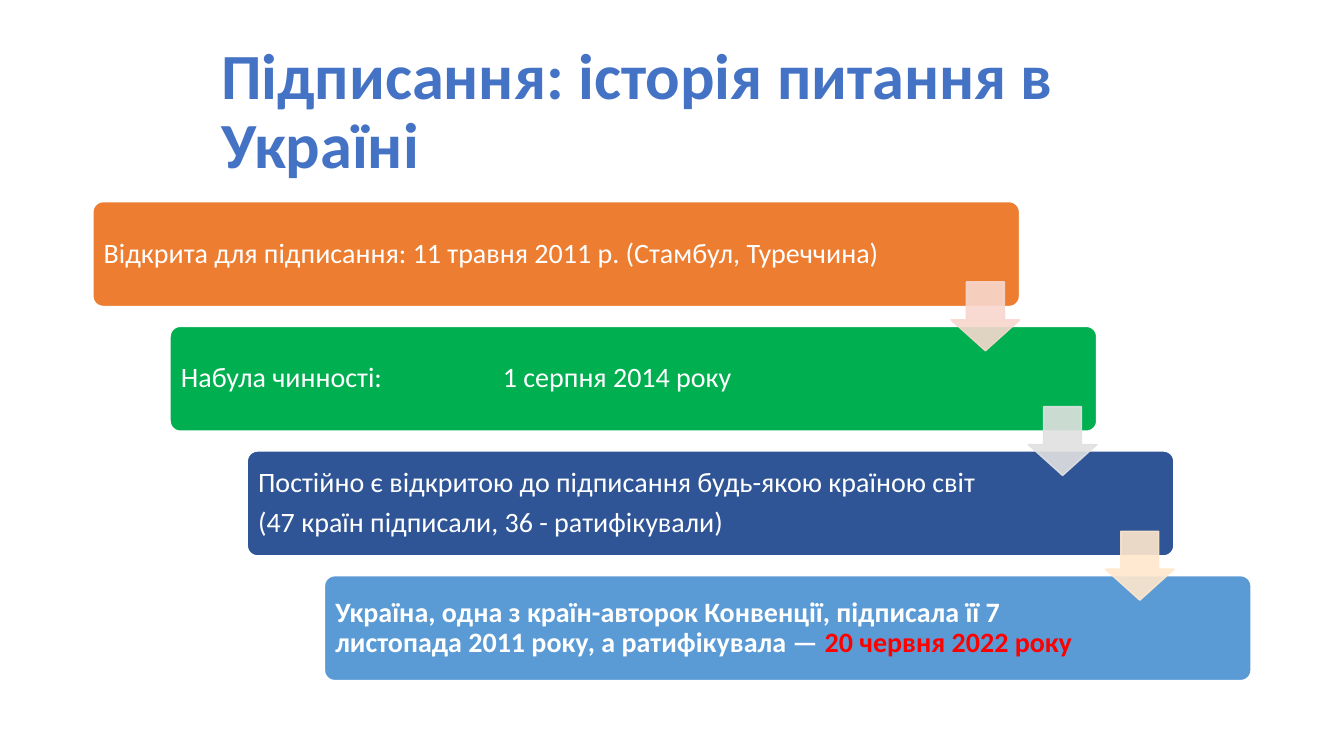
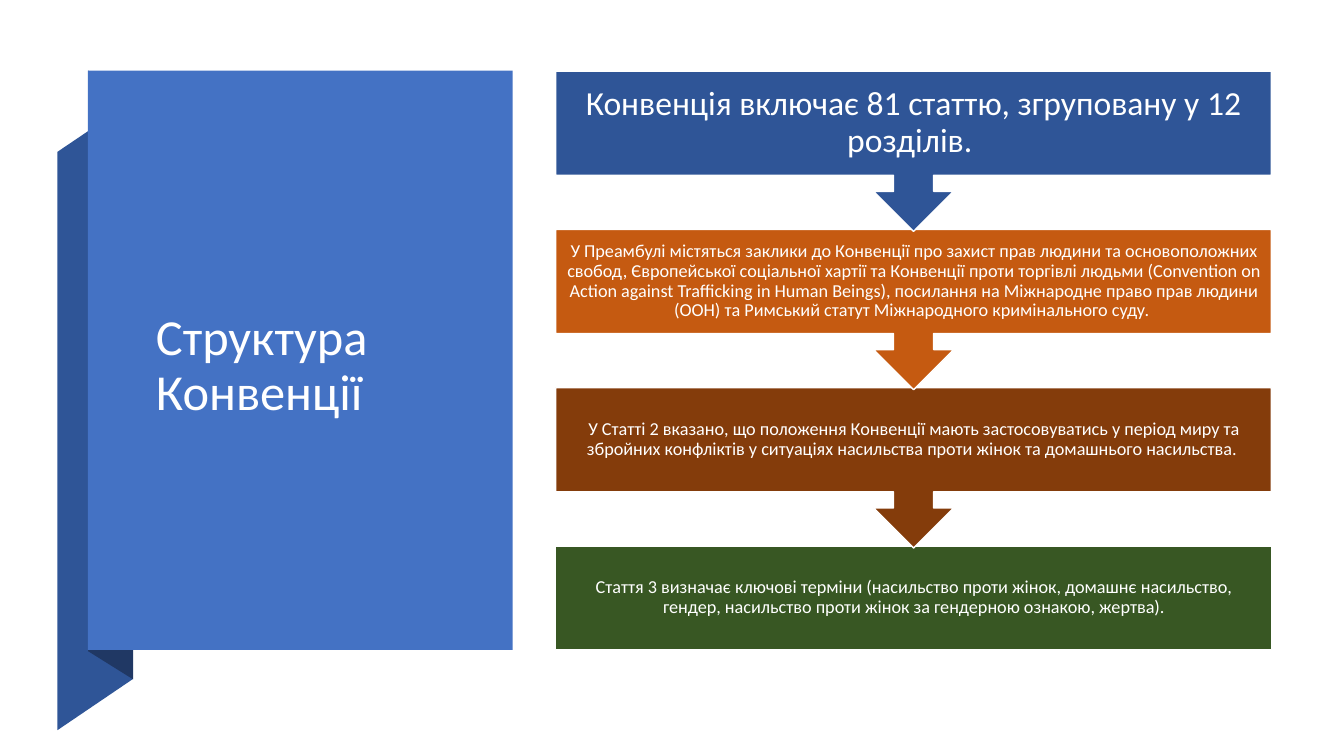
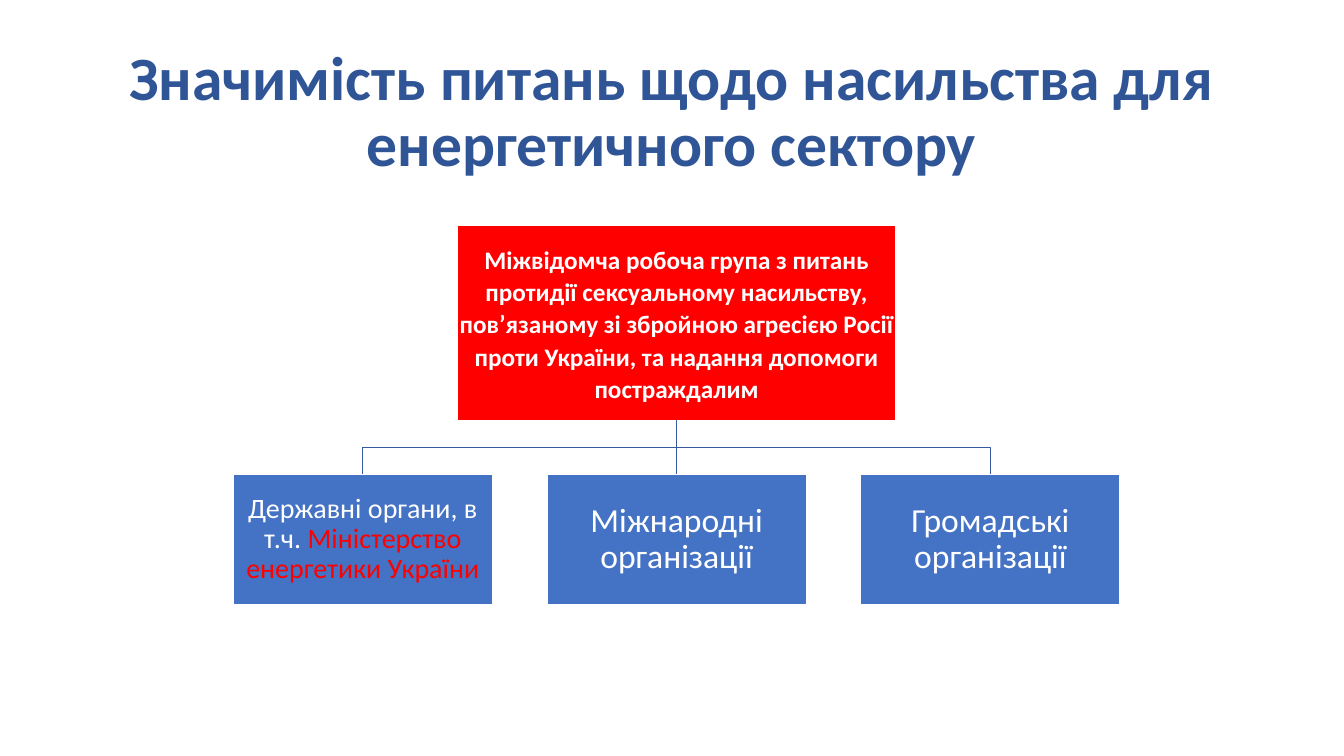
from dataclasses import dataclass
from typing import NamedTuple

from lxml import etree
from pptx import Presentation
from pptx.dml.color import RGBColor
from pptx.enum.shapes import MSO_CONNECTOR, MSO_SHAPE
from pptx.enum.text import MSO_ANCHOR, MSO_AUTO_SIZE, PP_ALIGN
from pptx.oxml.ns import qn
from pptx.util import Pt

RECTANGLE = MSO_SHAPE.RECTANGLE
ROUNDED = MSO_SHAPE.ROUNDED_RECTANGLE
DOWN_ARROW = MSO_SHAPE.DOWN_ARROW
CALLOUT = MSO_SHAPE.DOWN_ARROW_CALLOUT
STRAIGHT = MSO_CONNECTOR.STRAIGHT
LEFT, CENTER = PP_ALIGN.LEFT, PP_ALIGN.CENTER
MIDDLE = MSO_ANCHOR.MIDDLE
TOP_SIDE, BOTTOM_SIDE = 0, 2


@dataclass(frozen=True)
class Theme:
    font: str = "Calibri"
    white: str = "FFFFFF"
    blue: str = "4472C4"
    dark_blue: str = "2F5597"
    navy: str = "203864"
    sky: str = "5B9BD5"
    orange: str = "ED7D31"
    rust: str = "C55A11"
    brown: str = "843C0B"
    green: str = "00B050"
    forest: str = "385723"
    red: str = "FF0000"
    link: str = "365B9D"
    pink_arrow: str = "F8D7CE"
    grey_arrow: str = "E1E1E1"
    cream_arrow: str = "FFE8CC"
    history_title: int = 46
    sector_title: int = 44
    panel_title: int = 36
    large: int = 24
    body: int = 20
    group: int = 18
    small: int = 13


THEME = Theme()


class Box(NamedTuple):
    left: float
    top: float
    width: float
    height: float

    def points(self):
        return [Pt(value) for value in self]


def rgb(color):
    return RGBColor.from_string(color)


def apply(target, formats):
    for name, value in formats.items():
        setattr(target, name, value)


def draw_line(shape, color, width=1.0):
    shape.line.color.rgb = rgb(color)
    shape.line.width = Pt(width)


def paint(shape, fill, line=None, line_width=1.0):
    shape.shadow.inherit = False
    shape.fill.solid()
    shape.fill.fore_color.rgb = rgb(fill)
    if line is None:
        shape.line.fill.background()
    else:
        draw_line(shape, line, line_width)


def set_opacity(shape, percent):
    for color in shape.element.spPr.iter(qn("a:srgbClr")):
        etree.SubElement(color, qn("a:alpha"), val=str(percent * 1000))


def add_tab_stop(para, position):
    tabs = etree.SubElement(para._p.get_or_add_pPr(), qn("a:tabLst"))
    etree.SubElement(tabs, qn("a:tab"), pos=str(Pt(position)), algn="l")


def write(shape, paragraphs, size, color=THEME.white, bold=False, align=CENTER,
          spacing=0.9, after=None, insets=(7.2, 3.6, 7.2, 3.6)):
    """Fill a shape with paragraphs, each a list of (text, colour or None) spans."""
    frame = shape.text_frame
    left, top, right, bottom = map(Pt, insets)
    apply(frame, dict(word_wrap=True, auto_size=MSO_AUTO_SIZE.NONE,
                      vertical_anchor=MIDDLE, margin_left=left, margin_top=top,
                      margin_right=right, margin_bottom=bottom))
    gaps = after or [0.35 * size] * len(paragraphs)
    for index, (spans, gap) in enumerate(zip(paragraphs, gaps)):
        para = frame.add_paragraph() if index else frame.paragraphs[0]
        apply(para, dict(alignment=align, line_spacing=spacing, space_after=Pt(gap)))
        for text, span_color in spans:
            span = para.add_run()
            span.text = text
            apply(span.font, dict(name=THEME.font, size=Pt(size), bold=bold))
            span.font.color.rgb = rgb(span_color or color)


def add_block(page, kind, box, fill, line=None, line_width=1.0):
    block = page.shapes.add_shape(kind, *box.points())
    paint(block, fill, line, line_width)
    return block


def add_outline(page, corners, close=True):
    start, *rest = [(Pt(x), Pt(y)) for x, y in corners]
    builder = page.shapes.build_freeform(*start)
    builder.add_line_segments(rest, close=close)
    return builder.convert_to_shape()


def add_bent_line(page, corners):
    line = add_outline(page, corners, close=False)
    line.shadow.inherit = False
    line.fill.background()
    draw_line(line, THEME.link)


def join_blocks(page, upper, lower):
    """Straight line from the bottom of one block to the top of another."""
    line = page.shapes.add_connector(STRAIGHT, 0, 0, 0, 0)
    line.begin_connect(upper, BOTTOM_SIDE)
    line.end_connect(lower, TOP_SIDE)
    draw_line(line, THEME.link)
    etree.SubElement(line.element.spPr, qn("a:effectLst"))


def place_title(page, box, text, **style):
    title = page.shapes.title
    apply(title, dict(zip(("left", "top", "width", "height"), box.points())))
    write(title, [[(text, None)]], after=[0], **style)
    return title


def add_staircase(page, box, steps, arrow_colors):
    """Stepped blocks from top left to bottom right, arrows between neighbours."""
    width, height, arrow, arrow_drop = 662.4, 75.4, 49.2, 57.6
    shift = (box.width - width) / (len(steps) - 1)
    drop = (box.height - height) / (len(steps) - 1)
    spots = [Box(box.left + i * shift, box.top + i * drop, width, height)
             for i in range(len(steps))]
    for spot, (fill, bold, paragraphs) in zip(spots, steps):
        block = add_block(page, ROUNDED, spot, fill, THEME.white, 1.5)
        block.adjustments[0] = 0.1
        write(block, paragraphs, THEME.body, bold=bold, align=LEFT,
              insets=(5.8, 5.8, 88, 5.8))
        for para in block.text_frame.paragraphs:
            if "\t" in para.text:
                add_tab_stop(para, 230)
    for spot, color in zip(spots, arrow_colors):
        place = Box(spot.left + width - arrow, spot.top + arrow_drop, arrow, arrow)
        pointer = add_block(page, DOWN_ARROW, place, color, color)
        pointer.adjustments[0], pointer.adjustments[1] = 0.55, 0.45
        set_opacity(pointer, 90)


def add_ribbon_panel(page, box):
    """Panel with a ribbon folded behind its left edge."""
    left, top = box.left, box.top
    bottom = top + box.height
    tail, fold = left - 21.7, left + 32.3
    ribbon = [(tail, bottom + 57.4), (fold, bottom + 20.8),
              (fold, top + 21.5), (tail, top + 58)]
    shade = [(left + 0.3, bottom + 1), (fold, bottom + 21),
             (fold, top + 21), (left + 0.3, top)]
    for corners, fill in ((ribbon, THEME.dark_blue), (shade, THEME.navy)):
        paint(add_outline(page, corners), fill)
    add_block(page, RECTANGLE, box, THEME.blue)


def add_callout_chain(page, box, links):
    """Blocks pointing down one to the next; upper ones lie in front."""
    block_height, callout_height = 74, 114.5
    step = (box.height - block_height) / (len(links) - 1)
    for index, (fill, size, inset, text) in reversed(list(enumerate(links))):
        last = index == len(links) - 1
        place = Box(box.left, box.top + index * step, box.width,
                    block_height if last else callout_height)
        block = add_block(page, RECTANGLE if last else CALLOUT, place, fill, THEME.white)
        write(block, [[(text, None)]], size, insets=[inset] * 4)


def add_hierarchy(page, box, root_paragraphs, members):
    """A root block centred over a row of members, joined by lines."""
    root_width, root_height, width, height = 312.8, 139.7, 185.3, 93.1
    center = box.left + box.width / 2
    root_bottom = box.top + root_height
    row_top = box.top + box.height - height
    bus = (root_bottom + row_top) / 2
    step = (box.width - width) / (len(members) - 1)
    root = add_block(page, RECTANGLE,
                     Box(center - root_width / 2, box.top, root_width, root_height),
                     THEME.red, THEME.white)
    write(root, root_paragraphs, THEME.group, bold=True, spacing=1.07,
          after=[0, 8], insets=[0.8] * 4)
    for index, (size, spans) in enumerate(members):
        left = box.left + index * step
        middle = left + width / 2
        block = add_block(page, RECTANGLE, Box(left, row_top, width, height),
                          THEME.blue, THEME.white)
        write(block, [spans], size, insets=[1.2] * 4)
        if abs(middle - center) < 1:
            join_blocks(page, root, block)
        else:
            add_bent_line(page, [(center, root_bottom), (center, bus),
                                 (middle, bus), (middle, row_top)])


def build_history(page):
    place_title(page, Box(150.8, 28.6, 743, 104.4), "Підписання: історія питання в Україні",
                size=THEME.history_title, color=THEME.blue, bold=True, align=LEFT)
    steps = [
        (THEME.orange, False,
         [[("Відкрита для підписання: 11 травня 2011 р. (Стамбул, Туреччина)", None)]]),
        (THEME.green, False, [[("Набула чинності:\t1 серпня 2014 року", None)]]),
        (THEME.dark_blue, False,
         [[("Постійно є відкритою до підписання будь-якою країною світ", None)],
          [("(47 країн підписали, 36 - ратифікували)", None)]]),
        (THEME.sky, True,
         [[("Україна, одна з країн-авторок Конвенції, підписала її 7 листопада 2011 року, "
            "а ратифікувала — ", None), ("20 червня 2022 року", THEME.red)]]),
    ]
    add_staircase(page, Box(66.1, 143.8, 827.8, 342.6), steps,
                  [THEME.pink_arrow, THEME.grey_arrow, THEME.cream_arrow])


def build_structure(page):
    add_ribbon_panel(page, Box(62.7, 50.5, 303.5, 413.7))
    title = place_title(page, Box(104.2, 120, 216.7, 283.7), "Структура Конвенції",
                        size=THEME.panel_title, align=LEFT)
    title.element.getparent().append(title.element)
    links = [
        (THEME.dark_blue, THEME.large, 13.7,
         "Конвенція включає 81 статтю, згруповану у 12 розділів. "),
        (THEME.rust, THEME.small, 7.2,
         "У Преамбулі містяться заклики до Конвенції про захист прав людини та "
         "основоположних свобод, Європейської соціальної хартії та Конвенції проти "
         "торгівлі людьми (Convention on Action against Trafficking in Human Beings), "
         "посилання на Міжнародне право прав людини (ООН) та Римський статут "
         "Міжнародного кримінального суду. "),
        (THEME.brown, THEME.small, 7.2,
         "У Статті 2 вказано, що положення Конвенції мають застосовуватись у період "
         "миру та збройних конфліктів у ситуаціях насильства проти жінок та "
         "домашнього насильства. "),
        (THEME.forest, THEME.small, 7.2,
         "Стаття 3 визначає ключові терміни (насильство проти жінок, домашнє "
         "насильство, гендер, насильство проти жінок за гендерною ознакою, жертва)."),
    ]
    add_callout_chain(page, Box(397, 50.8, 511.2, 413.2), links)


def build_sector(page):
    place_title(page, Box(66, 28.8, 828, 104.4),
                "Значимість питань щодо насильства для енергетичного сектору",
                size=THEME.sector_title, color=THEME.dark_blue, bold=True)
    root = [
        [("Міжвідомча робоча група з питань", None)],
        [("протидії сексуальному насильству, пов’язаному зі збройною агресією Росії "
          "проти України, та надання допомоги постраждалим", None)],
    ]
    members = [
        (THEME.body, [("Державні органи, в т.ч. ", None),
                      ("Міністерство енергетики України", THEME.red)]),
        (THEME.large, [("Міжнародні організації", None)]),
        (THEME.large, [("Громадські організації", None)]),
    ]
    add_hierarchy(page, Box(166.5, 160.6, 633.6, 271.4), root, members)


def main():
    deck = Presentation()
    deck.slide_width, deck.slide_height = Pt(960), Pt(540)
    title_only = deck.slide_layouts.get_by_name("Title Only")
    for build in (build_history, build_structure, build_sector):
        build(deck.slides.add_slide(title_only))
    deck.save("out.pptx")


if __name__ == "__main__":
    main()
